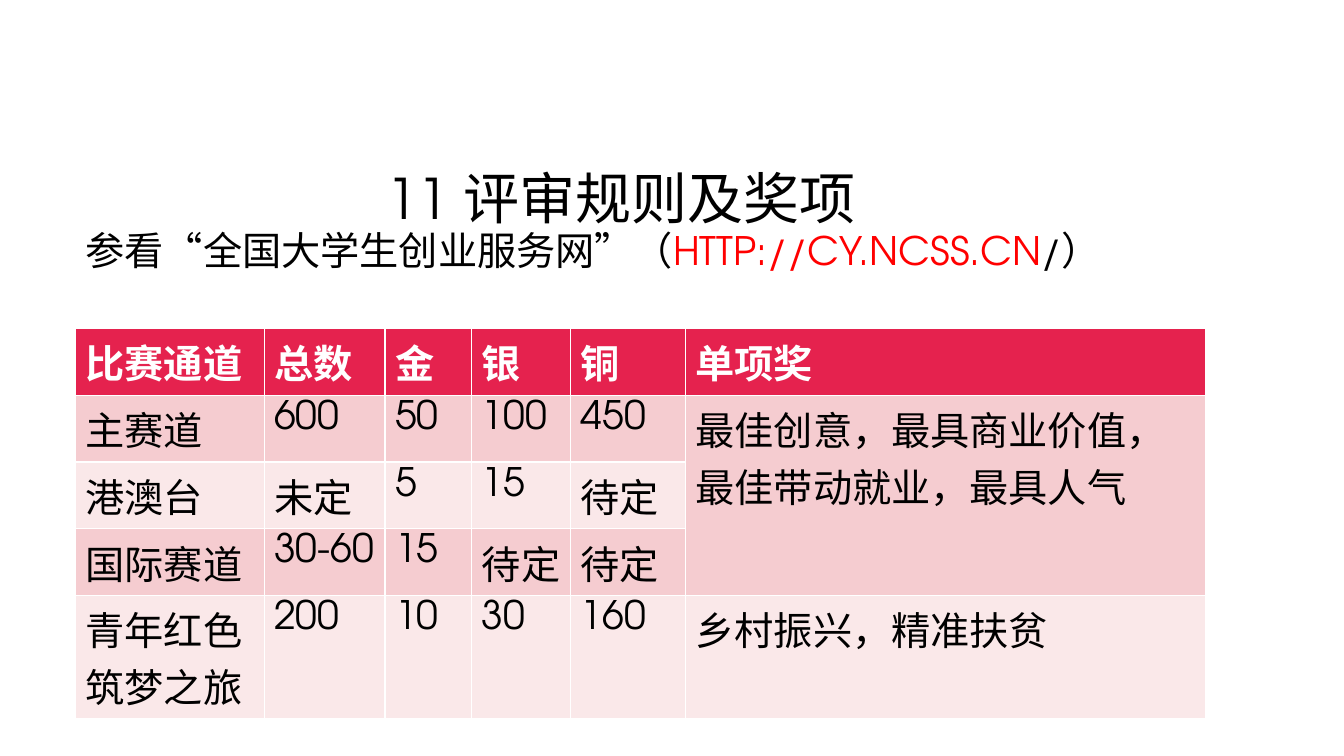
import pptx
import pptx.dml.color
import pptx.enum.text
import pptx.util

Inches, Pt = pptx.util.Inches, pptx.util.Pt
RGBColor = pptx.dml.color.RGBColor

BLACK = RGBColor(0x00, 0x00, 0x00)
WHITE = RGBColor(0xFF, 0xFF, 0xFF)
RED = RGBColor(0xFF, 0x00, 0x00)
CRIMSON = RGBColor(0xE5, 0x22, 0x4E)
BANDS = (RGBColor(0xF5, 0xCC, 0xD0), RGBColor(0xFA, 0xE8, 0xE9))

FONT = "TeX Gyre Adventor"
TITLE_SIZE, TEXT_SIZE = Pt(40), Pt(28)
LEFT = Inches(0.75)
HEADING_INDENT = Inches(2.98)

COLUMNS = (1.87, 1.2, 0.86, 0.98, 1.14, 5.16)
ROWS = (0.57, 0.57, 0.57, 0.57, 1.03)
AWARDS = (
    ("比赛通道", "总数", "金", "银", "铜", "单项奖"),
    ("主赛道", "600", "50", "100", "450", "最佳创意，最具商业价值，最佳带动就业，最具人气"),
    ("港澳台", "未定", "5", "15", "待定", ""),
    ("国际赛道", "30-60", "15", "待定", "待定", ""),
    ("青年红色筑梦之旅", "200", "10", "30", "160", "乡村振兴，精准扶贫"),
)


def style_font(font, size, color, bold=False):
    font.name, font.size, font.bold = FONT, size, bold
    font.color.rgb = color


def add_heading(slide, left, top, width, height):
    heading = slide.shapes.title
    heading.left, heading.top, heading.width, heading.height = left, top, width, height
    frame = heading.text_frame
    frame.word_wrap = True
    frame.auto_size = pptx.enum.text.MSO_AUTO_SIZE.NONE
    frame.vertical_anchor = pptx.enum.text.MSO_ANCHOR.MIDDLE

    # Only the first line is indented
    lines = frame.paragraphs[0]
    lines.alignment = pptx.enum.text.PP_ALIGN.LEFT
    lines.line_spacing = 0.9
    properties = lines._p.get_or_add_pPr()
    properties.set("marL", "0")
    properties.set("indent", str(HEADING_INDENT))
    style_font(lines.font, TITLE_SIZE, BLACK)
    lines.add_run().text = "11 评审规则及奖项"
    lines.add_line_break()

    # Reference to the website
    for text, color in (("参看“全国大学生创业服务网”（", BLACK),
                        ("HTTP://CY.NCSS.CN", RED), ("/）", BLACK)):
        part = lines.add_run()
        part.text = text
        part.font.size = TEXT_SIZE
        part.font.color.rgb = color


def add_awards(slide, left, top, width, height):
    awards = slide.shapes.add_table(len(ROWS), len(COLUMNS), left, top, width, height).table
    for column, share in zip(awards.columns, COLUMNS):
        column.width = int(width * share / sum(COLUMNS))
    for row, share in zip(awards.rows, ROWS):
        row.height = int(height * share / sum(ROWS))

    # Header row, then alternating bands
    for r, entries in enumerate(AWARDS):
        is_header = r == 0
        for c, entry in enumerate(entries):
            cell = awards.cell(r, c)
            cell.fill.solid()
            cell.fill.fore_color.rgb = CRIMSON if is_header else BANDS[(r - 1) % 2]
            cell.text = entry
            style_font(cell.text_frame.paragraphs[0].font, TEXT_SIZE,
                       WHITE if is_header else BLACK, is_header)

    # The first three tracks share their special awards
    awards.cell(1, 5).merge(awards.cell(3, 5))


def main():
    deck = pptx.Presentation()
    deck.slide_width, deck.slide_height = Inches(13.33), Inches(7.5)
    slide = deck.slides.add_slide(deck.slide_layouts[5])
    add_heading(slide, LEFT, Inches(1.34), Inches(11.83), Inches(1.74))
    add_awards(slide, LEFT, Inches(3.26), Inches(sum(COLUMNS)), Inches(sum(ROWS)))
    deck.save("out.pptx")


if __name__ == "__main__":
    main()
